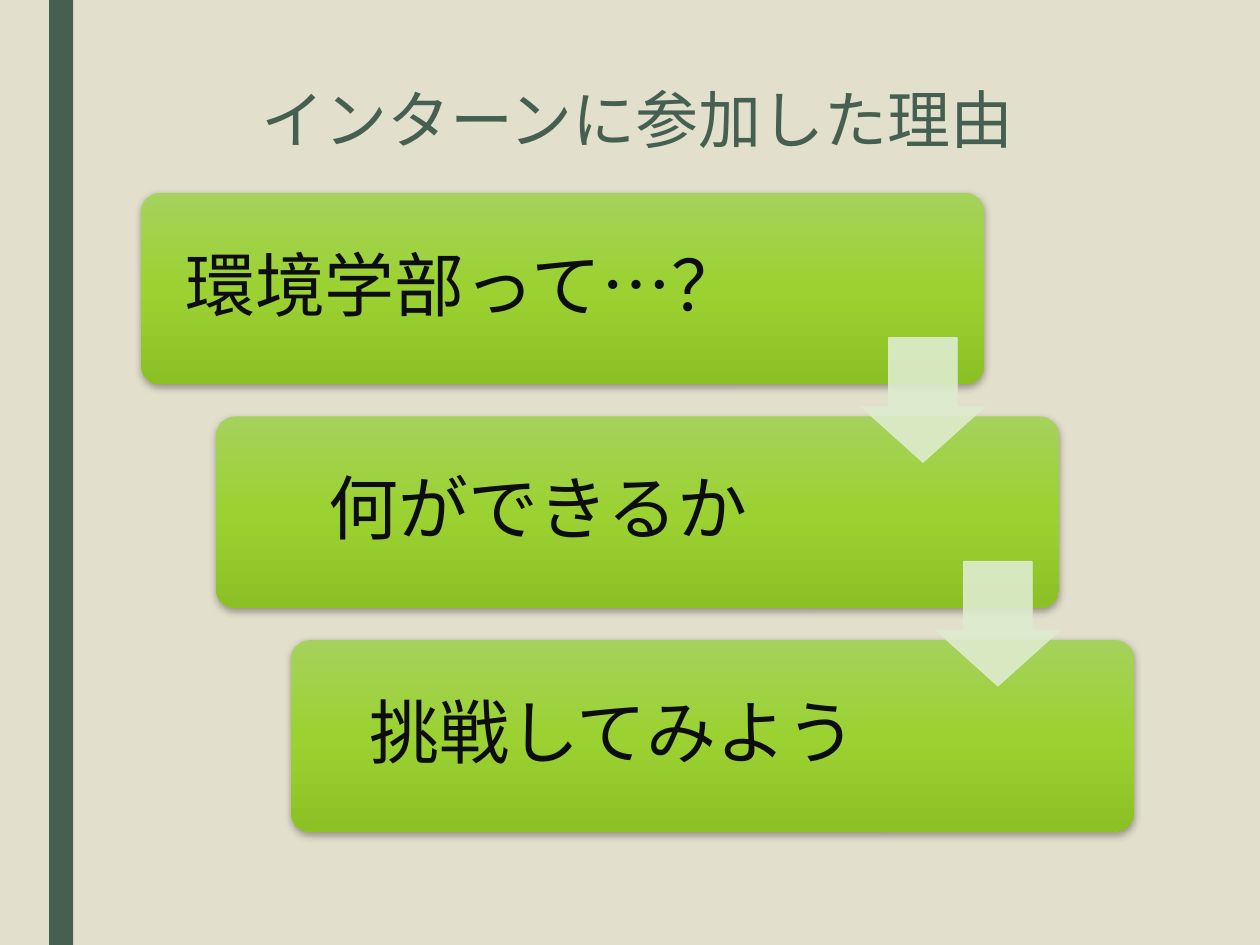
from dataclasses import dataclass

from lxml.etree import SubElement
from pptx import Presentation
from pptx.dml.color import RGBColor
from pptx.enum.shapes import MSO_SHAPE
from pptx.enum.text import MSO_ANCHOR, PP_ALIGN
from pptx.oxml import parse_xml
from pptx.oxml.ns import nsdecls, qn
from pptx.util import Inches, Pt


@dataclass(frozen=True)
class Theme:
    background: str = "E2DFCC"
    accent: str = "455F51"
    step_gradient: tuple = ((0, "A5D25C"), (50, "9BD231"), (100, "8CC125"))
    step_text: str = "0D0D0D"
    arrow: str = "DEECCE"
    font: str = "Cabin"
    title_size: int = 36
    step_size: int = 40


theme = Theme()


def write_text(frame, text, size, color):
    frame.word_wrap = True
    frame.vertical_anchor = MSO_ANCHOR.MIDDLE
    paragraph = frame.paragraphs[0]
    paragraph.text = text
    paragraph.alignment = PP_ALIGN.CENTER
    paragraph.line_spacing = 0.9
    paragraph.font.name = theme.font
    paragraph.font.size = Pt(size)
    paragraph.font.color.rgb = RGBColor.from_string(color)


def style_step(step):
    """Give a step its vertical three-colour gradient and soft shadow."""
    stops = "".join(
        f'<a:gs pos="{position * 1000}"><a:srgbClr val="{color}"/></a:gs>'
        for position, color in theme.step_gradient
    )
    step.line.fill.background()
    step.fill.gradient()
    properties = step._element.spPr
    properties.replace(properties.find(qn("a:gradFill")), parse_xml(
        f'<a:gradFill {nsdecls("a")} rotWithShape="1"><a:gsLst>{stops}</a:gsLst>'
        '<a:lin ang="5400000" scaled="0"/></a:gradFill>'
    ))
    properties.append(parse_xml(
        f'<a:effectLst {nsdecls("a")}>'
        f'<a:outerShdw blurRad="{Pt(4.5)}" dist="{Pt(1.5)}" dir="5400000" rotWithShape="0">'
        '<a:srgbClr val="000000"><a:alpha val="35000"/></a:srgbClr>'
        '</a:outerShdw></a:effectLst>'
    ))


prs = Presentation()
prs.slide_width, prs.slide_height = Inches(10), Inches(7.5)
slide = prs.slides.add_slide(prs.slide_layouts[5])
slide.background.fill.solid()
slide.background.fill.fore_color.rgb = RGBColor.from_string(theme.background)

side_bar = slide.shapes.add_shape(
    MSO_SHAPE.RECTANGLE, Inches(0.39), 0, Inches(0.19), prs.slide_height)
side_bar.shadow.inherit = False
side_bar.fill.solid()
side_bar.fill.fore_color.rgb = RGBColor.from_string(theme.accent)
side_bar.line.fill.background()

title = slide.shapes.title
title.left, title.top = Inches(1.12), Inches(0.61)
title.width, title.height = Inches(7.88), Inches(0.73)
write_text(title.text_frame, "インターンに参加した理由", theme.title_size, theme.accent)

# Each step lies lower and further right than the one before
reasons = ["環境学部って…？", "何ができるか", "挑戦してみよう"]
first_left, first_top = Inches(1.12), Inches(1.53)
shift_right, shift_down = Inches(0.595), Inches(1.775)
step_width, step_height = Inches(6.69), Inches(1.52)
arrow_size = Inches(0.99)

for index, reason in enumerate(reasons):
    step = slide.shapes.add_shape(
        MSO_SHAPE.ROUNDED_RECTANGLE,
        first_left + index * shift_right, first_top + index * shift_down,
        step_width, step_height)
    step.adjustments[0] = 0.1
    style_step(step)
    frame = step.text_frame
    frame.margin_left = frame.margin_top = frame.margin_bottom = Inches(0.17)
    frame.margin_right = Inches(1.75)  # keeps the text clear of the arrow
    write_text(frame, reason, theme.step_size, theme.step_text)

for index in range(len(reasons) - 1):
    arrow = slide.shapes.add_shape(
        MSO_SHAPE.DOWN_ARROW,
        Inches(6.83) + index * shift_right, Inches(2.68) + index * shift_down,
        arrow_size, arrow_size)
    arrow.shadow.inherit = False
    # The preset takes the head length first and the shaft width second
    arrow.adjustments[0], arrow.adjustments[1] = 0.55, 0.45
    arrow.line.width = Pt(0.5)
    arrow.fill.solid()
    arrow.line.fill.solid()
    for color in (arrow.fill.fore_color, arrow.line.color):
        color.rgb = RGBColor.from_string(theme.arrow)
    for color_element in arrow._element.spPr.iter(qn("a:srgbClr")):
        SubElement(color_element, qn("a:alpha")).set("val", "90000")

prs.save("out.pptx")
